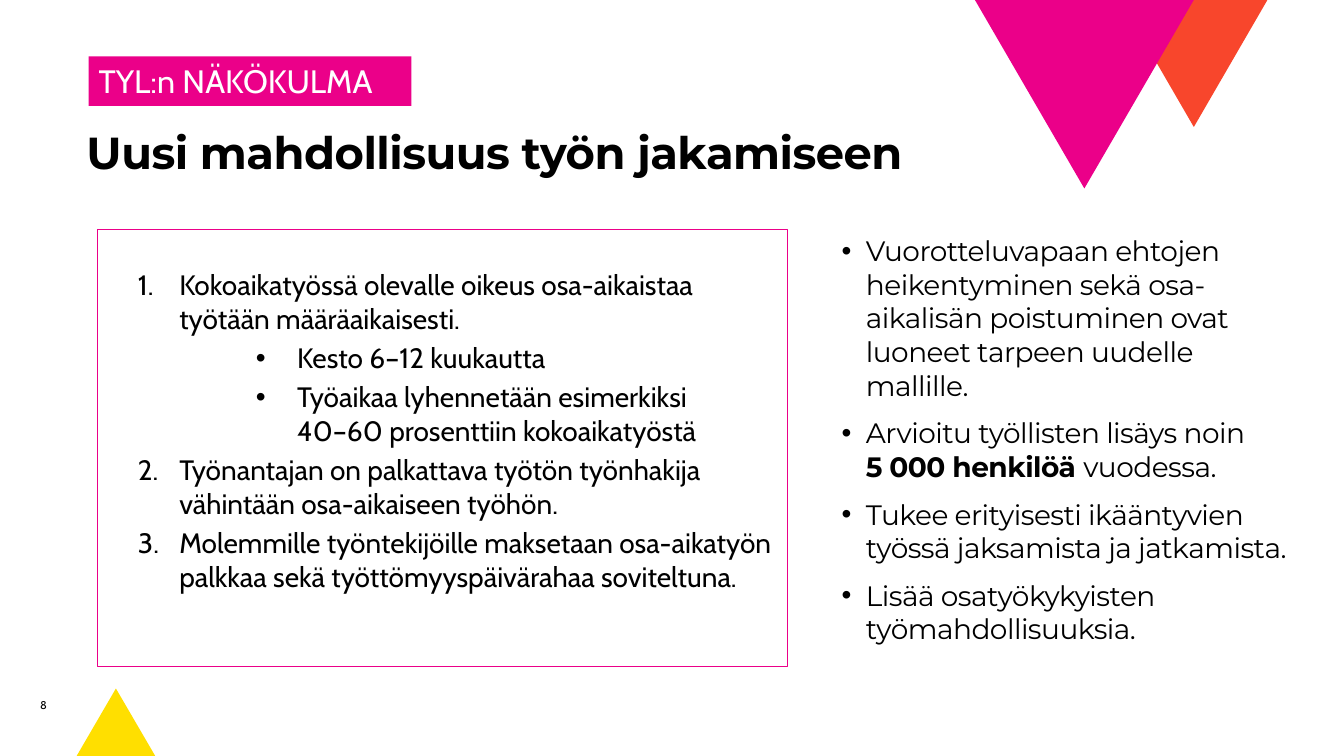
import pptx
import pptx.util
import pptx.dml.color
import pptx.enum.shapes
import pptx.enum.text
import pptx.oxml.ns
from lxml import etree

COLOURS = {"pink": "EB0089", "orange": "F8462C", "yellow": "FFDF00",
           "white": "FFFFFF", "black": "000000"}
WIDTH, HEIGHT = pptx.util.Inches(13.33), pptx.util.Inches(7.5)
SHAPES = pptx.enum.shapes.MSO_SHAPE
ANCHORS = pptx.enum.text.MSO_ANCHOR

PROPOSAL = [
    (0, "Kokoaikatyössä olevalle oikeus osa-aikaistaa työtään määräaikaisesti."),
    (2, "Kesto 6–12 kuukautta"),
    (2, "Työaikaa lyhennetään esimerkiksi\v40–60 prosenttiin kokoaikatyöstä"),
    (0, "Työnantajan on palkattava työtön työnhakija vähintään osa-aikaiseen työhön."),
    (0, "Molemmille työntekijöille maksetaan osa-aikatyön palkkaa sekä "
        "työttömyyspäivärahaa soviteltuna."),
]
REASONS = [
    [("Vuorotteluvapaan ehtojen heikentyminen sekä osa-aikalisän poistuminen ovat "
      "luoneet tarpeen uudelle mallille.", False)],
    [("Arvioitu työllisten lisäys noin\v", False), ("5 000 henkilöä ", True),
     ("vuodessa.", False)],
    [("Tukee erityisesti ikääntyvien työssä jaksamista ja jatkamista.", False)],
    [("Lisää osatyökykyisten työmahdollisuuksia.", False)],
]


def rgb(name):
    return pptx.dml.color.RGBColor.from_string(COLOURS[name])


def place(box):
    """Turn left, top, width, height in percent of the slide into lengths."""
    return [round(share * side / 100)
            for share, side in zip(box, (WIDTH, HEIGHT, WIDTH, HEIGHT))]


def add_filled(page, kind, box, fill, line=None):
    shape = page.shapes.add_shape(kind, *place(box))
    shape.shadow.inherit = False
    shape.fill.solid()
    shape.fill.fore_color.rgb = rgb(fill)
    if line:
        shape.line.color.rgb = rgb(line)
        shape.line.width = pptx.util.Pt(0.25)
    else:
        shape.line.fill.background()
    return shape


def add_text_box(page, box):
    frame = page.shapes.add_textbox(*place(box)).text_frame
    frame.word_wrap = True
    return frame


def add_text(para, text, font, size, colour="black", bold=False, spacing=0):
    """Add a run, with a line break wherever the text has a vertical tab."""
    for index, part in enumerate(text.split("\v")):
        if index:
            para.add_line_break()
        if part:
            span = para.add_run()
            span.text = part
            span.font.name = font
            span.font.size = pptx.util.Pt(size)
            span.font.bold = bold
            span.font.color.rgb = rgb(colour)
            if spacing:
                span.font._element.set("spc", str(round(spacing * 100)))


def add_list_item(frame, index, left, hanging, before, numbered=False):
    """Return a marked paragraph; the first one has no space before."""
    para = frame.paragraphs[0] if index == 0 else frame.add_paragraph()
    para.alignment = pptx.enum.text.PP_ALIGN.LEFT
    para.space_before = pptx.util.Pt(before if index else 0)
    properties = para._p.get_or_add_pPr()
    properties.set("marL", str(pptx.util.Inches(left)))
    properties.set("indent", str(-pptx.util.Inches(hanging)))
    name = pptx.oxml.ns.qn
    colour = etree.SubElement(properties, name("a:buClr"))
    etree.SubElement(colour, name("a:srgbClr"), val=COLOURS["black"])
    face = "Cabin" if numbered else "Arial"
    etree.SubElement(properties, name("a:buFont"), typeface=face)
    if numbered:
        etree.SubElement(properties, name("a:buAutoNum"), type="arabicPeriod")
    else:
        etree.SubElement(properties, name("a:buChar"), char="•")
    return para


def add_triangles(page):
    for fill, box, turn in (("yellow", (5.7, 91.07, 5.85, 8.93), 0),
                            ("orange", (83.35, 0, 10.95, 16.8), 180),
                            ("pink", (72.54, 0, 16.28, 24.93), 180)):
        add_filled(page, SHAPES.ISOSCELES_TRIANGLE, box, fill).rotation = turn


def add_tag(page, box):
    frame = add_filled(page, SHAPES.RECTANGLE, box, "pink").text_frame
    frame.word_wrap = True
    frame.vertical_anchor = ANCHORS.TOP
    para = frame.paragraphs[0]
    para.alignment = pptx.enum.text.PP_ALIGN.LEFT
    add_text(para, "TYL:n NÄKÖKULMA", "Cabin", 23.1, "white")


def add_title(page, box):
    add_text(add_text_box(page, box).paragraphs[0], "Uusi mahdollisuus työn jakamiseen",
             "Montserrat", 32, bold=True, spacing=-0.4)


def add_proposal(page, box):
    frame = add_filled(page, SHAPES.RECTANGLE, box, "white", "pink").text_frame
    frame.word_wrap = True
    frame.vertical_anchor = ANCHORS.MIDDLE
    frame.margin_bottom = round(0.09 * place(box)[3])
    for index, (level, text) in enumerate(PROPOSAL):
        para = add_list_item(frame, index, 1.89 if level else 0.72, 0.41, 4, level == 0)
        para.level = level
        add_text(para, text, "Cabin", 20)


def add_reasons(page, box):
    frame = add_text_box(page, box)
    for index, parts in enumerate(REASONS):
        para = add_list_item(frame, index, 0.25, 0.24, 8)
        para.space_after = pptx.util.Pt(2)
        for text, bold in parts:
            add_text(para, text, "Montserrat", 20, bold=bold, spacing=-0.4)


def add_page_number(page, box):
    add_text(add_text_box(page, box).paragraphs[0], "8", "Cabin", 8)


def main():
    deck = pptx.Presentation()
    deck.slide_width, deck.slide_height = WIDTH, HEIGHT
    page = deck.slides.add_slide(deck.slide_layouts[6])
    add_triangles(page)
    add_title(page, (5.7, 15.87, 88.6, 11.73))
    add_proposal(page, (7.2, 30.27, 51.39, 57.87))
    add_page_number(page, (2.25, 91.73, 3.3, 4.93))
    add_reasons(page, (61.82, 30.27, 34.81, 59.6))
    add_tag(page, (6.6, 7.47, 24.01, 6.53))
    deck.save("out.pptx")


if __name__ == "__main__":
    main()
